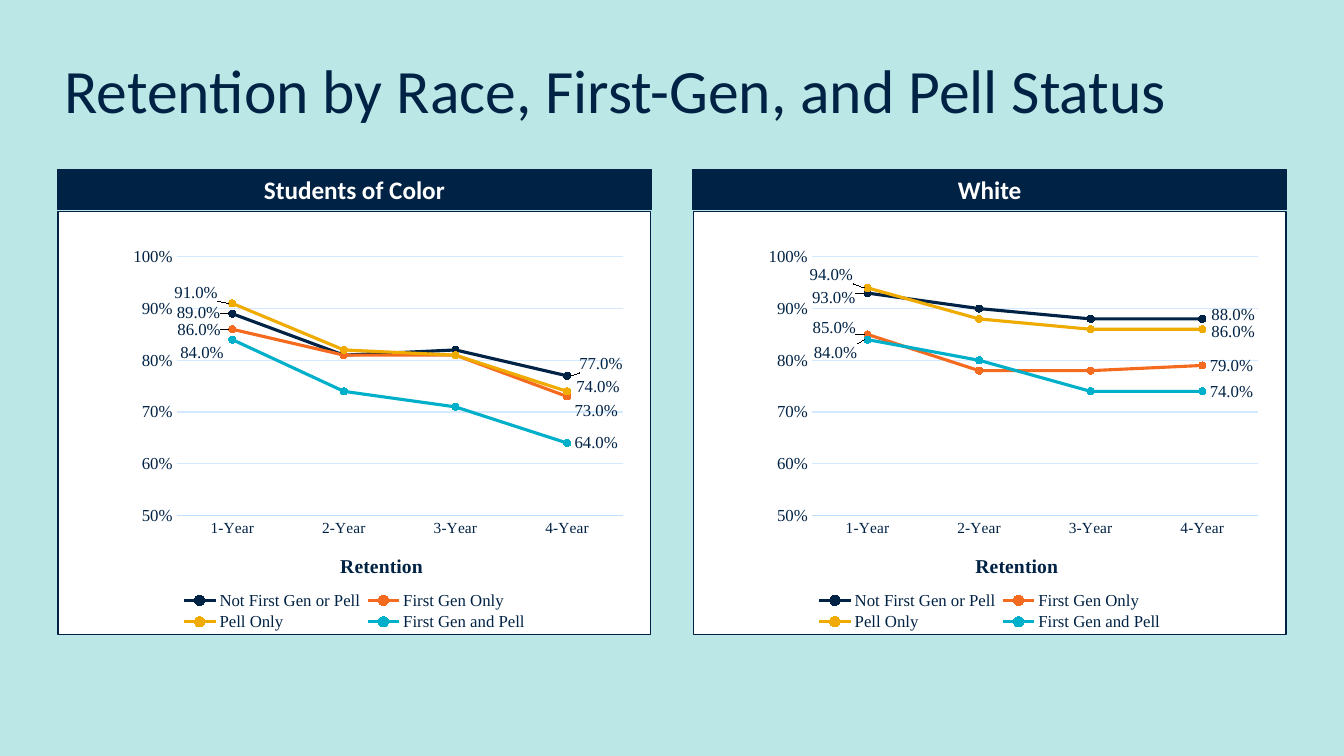
import pptx
import pptx.util
import pptx.dml.color
import pptx.chart.data
import pptx.enum.chart
import pptx.enum.shapes
import pptx.enum.text
import pptx.oxml
import pptx.oxml.ns

Inches = pptx.util.Inches
Pt = pptx.util.Pt
RGBColor = pptx.dml.color.RGBColor
qn = pptx.oxml.ns.qn
Place = pptx.enum.chart.XL_LABEL_POSITION

NAVY = RGBColor(0x00, 0x22, 0x44)
ORANGE = RGBColor(0xF4, 0x6A, 0x1F)
GOLD = RGBColor(0xF0, 0xAB, 0x00)
TEAL = RGBColor(0x00, 0xB0, 0xCA)
MINT = RGBColor(0xBB, 0xE7, 0xE6)
WHITE = RGBColor(0xFF, 0xFF, 0xFF)
AXIS = RGBColor(0xBD, 0xDE, 0xFF)
GRID = RGBColor(0xD3, 0xE9, 0xFF)
SERIF = "Times New Roman"

TITLE = "Retention by Race, First-Gen, and Pell Status"
YEARS = ["1-Year", "2-Year", "3-Year", "4-Year"]
GROUPS = [
    ("Not First Gen or Pell", NAVY),
    ("First Gen Only", ORANGE),
    ("Pell Only", GOLD),
    ("First Gen and Pell", TEAL),
]
PANELS = [
    {
        "head": "Students of Color",
        "rates": [
            (0.89, 0.81, 0.82, 0.77),
            (0.86, 0.81, 0.81, 0.73),
            (0.91, 0.82, 0.81, 0.74),
            (0.84, 0.74, 0.71, 0.64),
        ],
        "shifts": [
            (-0.8, -0.2), (0.8, -2.8),
            (-0.7, 0), (0, 3.3),
            (-1.2, -2.6), (0.3, -1.2),
            (-0.2, 3.1), (0, 0),
        ],
    },
    {
        "head": "White",
        "rates": [
            (0.93, 0.90, 0.88, 0.88),
            (0.85, 0.78, 0.78, 0.79),
            (0.94, 0.88, 0.86, 0.86),
            (0.84, 0.80, 0.74, 0.74),
        ],
        "shifts": [
            (-0.8, 1.2), (0.3, -0.9),
            (-0.7, -1.7), (0, 0),
            (-1.2, -3.1), (0.3, 0.7),
            (-0.5, 3.1), (0, 0),
        ],
    },
]
LEFT, STEP, WIDTH = 0.57, 6.3, 5.89
HEAD_TOP, HEAD_H = 1.68, 0.4
PLOT_TOP, PLOT_H = 2.09, 4.21


def style(font, size, color=NAVY, name=SERIF, bold=False):
    font.size = Pt(size)
    font.name = name
    font.bold = bold
    font.color.rgb = color


def stroke(line, color, width):
    line.color.rgb = color
    line.width = Pt(width)


def arrange(node, index, modes, sizes):
    old = node.find(qn("c:layout"))
    if old is not None:
        node.remove(old)
    layout = node.makeelement(qn("c:layout"), {})
    manual = layout.makeelement(qn("c:manualLayout"), {})
    layout.append(manual)
    for tag, val in list(modes.items()) + list(sizes.items()):
        manual.append(manual.makeelement(qn("c:" + tag), {"val": str(val)}))
    node.insert(index, layout)


def frame(chart):
    rgb = pptx.oxml.parse_xml(
        f'<c:spPr {pptx.oxml.ns.nsdecls("c", "a")}>'
        f'<a:solidFill><a:srgbClr val="{WHITE}"/></a:solidFill>'
        f'<a:ln w="{Pt(0.75)}"><a:solidFill><a:srgbClr val="{NAVY}"/>'
        '</a:solidFill></a:ln></c:spPr>'
    )
    chart.element.find(qn("c:chart")).addnext(rgb)


def set_axes(chart):
    none = pptx.enum.chart.XL_TICK_MARK.NONE
    cat, val = chart.category_axis, chart.value_axis
    for axis, size in ((cat, 11), (val, 12)):
        axis.major_tick_mark = axis.minor_tick_mark = none
        style(axis.tick_labels.font, size)
    stroke(cat.format.line, AXIS, 0.75)
    text = cat.axis_title.text_frame
    text.text = "Retention"
    style(text.paragraphs[0].runs[0].font, 14, bold=True)
    val.minimum_scale, val.maximum_scale, val.major_unit = 0.5, 1, 0.1
    val.tick_labels.number_format = "0%"
    val.tick_labels.number_format_is_linked = False
    val.format.line.fill.background()
    val.has_major_gridlines = True
    stroke(val.major_gridlines.format.line, GRID, 0.75)


def set_lines(chart, shifts):
    for line, (name, color) in zip(chart.plots[0].series, GROUPS):
        line.smooth = False
        stroke(line.format.line, color, 2.25)
        mark = line.marker
        mark.style = pptx.enum.chart.XL_MARKER_STYLE.CIRCLE
        mark.size = 5
        mark.format.fill.solid()
        mark.format.fill.fore_color.rgb = color
        stroke(mark.format.line, color, 0.75)
        labels = line.data_labels
        labels.show_value = False
        labels.number_format = "0.0%"
        labels.number_format_is_linked = False
        for index, place in ((0, Place.LEFT), (3, Place.RIGHT)):
            label = line.points[index].data_label
            style(label.font, 12)
            label.position = place
    tags = list(chart.element.iter(qn("c:dLbl")))
    for tag, (x, y) in zip(tags, shifts):
        if x or y:
            arrange(tag, 1, {}, {"x": round(x / 100, 3), "y": round(y / 100, 3)})


def add_panel(slide, left, panel):
    data = pptx.chart.data.CategoryChartData(number_format="0.0%")
    data.categories = YEARS
    for (name, color), rates in zip(GROUPS, panel["rates"]):
        data.add_series(name, rates)
    chart = slide.shapes.add_chart(
        pptx.enum.chart.XL_CHART_TYPE.LINE_MARKERS, Inches(left),
        Inches(PLOT_TOP), Inches(WIDTH), Inches(PLOT_H), data).chart
    chart.has_title = False
    style(chart.font, 10)
    chart.plots[0].vary_by_categories = False
    set_axes(chart)
    set_lines(chart, panel["shifts"])
    chart.has_legend = True
    chart.legend.position = pptx.enum.chart.XL_LEGEND_POSITION.BOTTOM
    chart.legend.include_in_layout = False
    style(chart.legend.font, 12)
    frame(chart)
    edge = {"xMode": "edge", "yMode": "edge"}
    arrange(chart.element.find(".//" + qn("c:plotArea")), 0,
            {"layoutTarget": "inner", **edge},
            {"x": 0.2, "y": 0.108, "w": 0.753, "h": 0.611})
    arrange(chart.category_axis.axis_title.element
            if hasattr(chart.category_axis.axis_title, "element")
            else chart.element.find(".//" + qn("c:title")), 1,
            edge, {"x": 0.47, "y": 0.8})
    arrange(chart.legend.element if hasattr(chart.legend, "element")
            else chart.element.find(".//" + qn("c:legend")), 1,
            edge, {"x": 0.2, "y": 0.89, "w": 0.6, "h": 0.11})

    head = slide.shapes.add_shape(
        pptx.enum.shapes.MSO_SHAPE.RECTANGLE, Inches(left),
        Inches(HEAD_TOP), Inches(WIDTH), Inches(HEAD_H))
    head.shadow.inherit = False
    head.fill.solid()
    head.fill.fore_color.rgb = NAVY
    stroke(head.line, NAVY, 0.75)
    head.text_frame.text = panel["head"]
    para = head.text_frame.paragraphs[0]
    para.alignment = pptx.enum.text.PP_ALIGN.CENTER
    style(para.runs[0].font, 18, WHITE, "Calibri", True)


def main():
    deck = pptx.Presentation()
    deck.slide_width, deck.slide_height = Inches(13.33), Inches(7.5)
    slide = deck.slides.add_slide(deck.slide_layouts[5])
    slide.background.fill.solid()
    slide.background.fill.fore_color.rgb = MINT
    title = slide.shapes.title
    title.left, title.top = Inches(0.54), Inches(0.17)
    title.width, title.height = Inches(12.22), Inches(1.51)
    title.text_frame.text = TITLE
    title.text_frame.vertical_anchor = pptx.enum.text.MSO_ANCHOR.MIDDLE
    para = title.text_frame.paragraphs[0]
    para.alignment = pptx.enum.text.PP_ALIGN.LEFT
    para.line_spacing = 0.9
    style(para.runs[0].font, 44, NAVY, "Calibri")
    for index, panel in enumerate(PANELS):
        add_panel(slide, LEFT + index * STEP, panel)
    deck.save("out.pptx")


if __name__ == "__main__":
    main()
